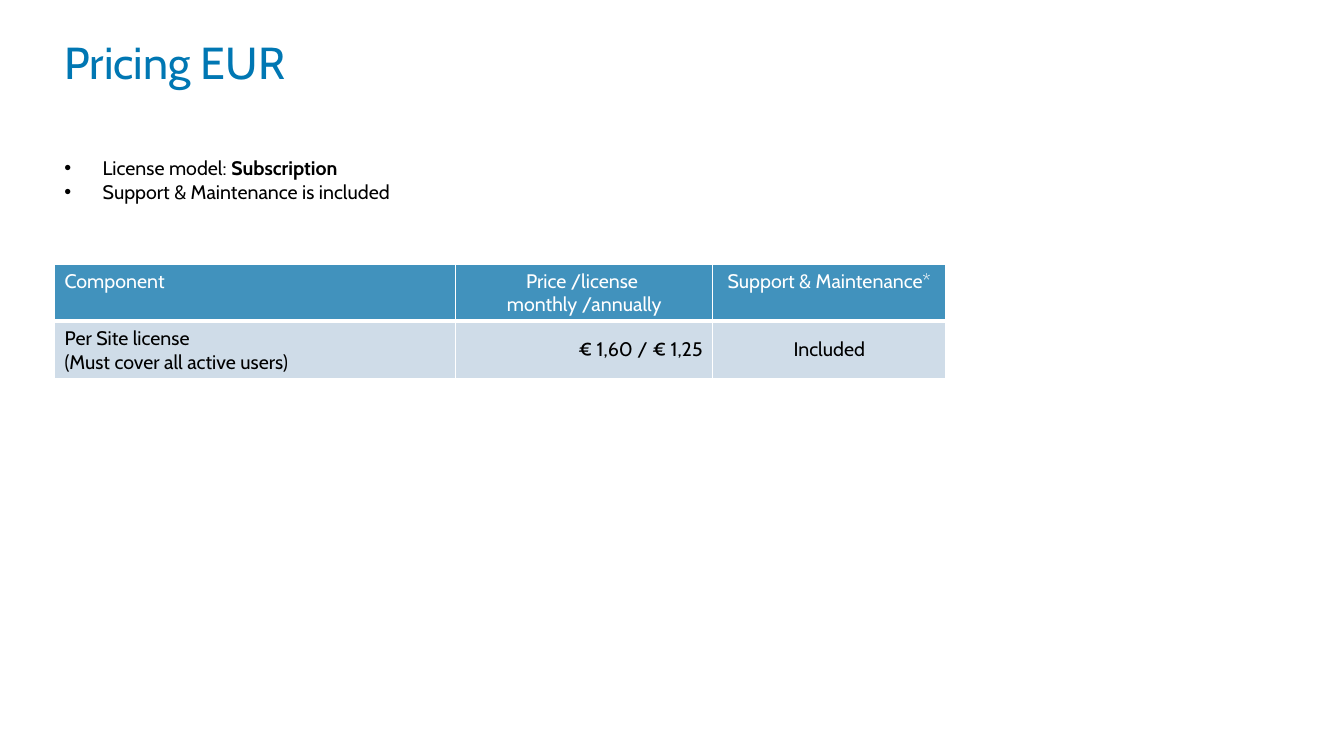
from dataclasses import dataclass

from lxml.etree import SubElement
from pptx import Presentation
from pptx.dml.color import RGBColor
from pptx.enum.text import MSO_ANCHOR as Anchor, PP_ALIGN as Align
from pptx.oxml.ns import qn
from pptx.util import Inches, Pt


@dataclass(frozen=True)
class Theme:
    font: str = "Cabin"
    title_size: int = 32
    body_size: int = 14
    title: str = "0077B3"
    text: str = "000000"
    white: str = "FFFFFF"
    header_fill: str = "4192BD"
    body_fill: str = "CFDCE8"


THEME = Theme()
COLUMN_WIDTHS = (3.98, 2.55, 2.31)
ROW_HEIGHT = 0.565
ALL_SIDES = ("L", "R", "T", "B")
HEADER = (
    (["Component"], Align.LEFT),
    (["Price /license ", "monthly /annually"], Align.CENTER),
    (["Support & Maintenance*"], Align.CENTER),
)
SITE_LICENSE = (
    (["Per Site license \n(Must cover all active users)"], Align.LEFT),
    (["€ 1,60 / € 1,25"], Align.RIGHT),
    (["Included"], Align.CENTER),
)


def add_bullet(paragraph, indent=0.38):
    properties = paragraph._p.get_or_add_pPr()
    properties.set("marL", str(Inches(indent)))
    properties.set("indent", str(-Inches(indent)))
    SubElement(properties, qn("a:buFont"), typeface="Arial")
    SubElement(properties, qn("a:buChar"), char="•")


def write(frame, paragraphs, *, size=THEME.body_size, color=THEME.text,
          align=Align.LEFT, bullet=False, line_spacing=None):
    """Fill a frame; a paragraph is a string or a list of (text, bold) runs."""
    frame.word_wrap = True
    for index, content in enumerate(paragraphs):
        paragraph = frame.add_paragraph() if index else frame.paragraphs[0]
        paragraph.alignment = align
        if line_spacing:
            paragraph.line_spacing = line_spacing
        if bullet:
            add_bullet(paragraph)
        runs = [(content, False)] if isinstance(content, str) else content
        for text, bold in runs:
            for line_number, line in enumerate(text.split("\n")):
                if line_number:
                    paragraph.add_line_break()
                run = paragraph.add_run()
                run.text = line
                run.font.name = THEME.font
                run.font.size = Pt(size)
                run.font.bold = bold
                run.font.color.rgb = RGBColor.from_string(color)


def add_text(slide, box, paragraphs, **text_format):
    shape = slide.shapes.add_textbox(*map(Inches, box))
    write(shape.text_frame, paragraphs, **text_format)


def set_borders(cell, widths):
    properties = cell._tc.get_or_add_tcPr()
    for index, (side, width) in enumerate(widths.items()):
        line = properties.makeelement(qn(f"a:ln{side}"), w=str(Pt(width)))
        fill = SubElement(line, qn("a:solidFill"))
        SubElement(fill, qn("a:srgbClr"), val=THEME.white)
        properties.insert(index, line)


def add_table_row(table, row, contents, *, fill, color, anchor, bottom):
    for column, (paragraphs, align) in enumerate(contents):
        cell = table.cell(row, column)
        cell.vertical_anchor = anchor
        cell.fill.solid()
        cell.fill.fore_color.rgb = RGBColor.from_string(fill)
        set_borders(cell, dict.fromkeys(ALL_SIDES, 1) | bottom)
        write(cell.text_frame, paragraphs, color=color, align=align)


def add_price_table(slide, left, top):
    box = (left, top, sum(COLUMN_WIDTHS), 2 * ROW_HEIGHT)
    table = slide.shapes.add_table(2, len(COLUMN_WIDTHS), *map(Inches, box)).table
    for column, width in zip(table.columns, COLUMN_WIDTHS):
        column.width = Inches(width)
    add_table_row(table, 0, HEADER, fill=THEME.header_fill, color=THEME.white,
                  anchor=Anchor.TOP, bottom={"B": 3})
    add_table_row(table, 1, SITE_LICENSE, fill=THEME.body_fill, color=THEME.text,
                  anchor=Anchor.MIDDLE, bottom={"T": 3})


def add_pricing_slide(presentation):
    slide = presentation.slides.add_slide(presentation.slide_layouts[6])
    left = 0.54
    add_text(slide, (left, 0.36, 12.25, 0.6), ["Pricing EUR"],
             size=THEME.title_size, color=THEME.title, line_spacing=0.9)
    add_text(slide, (left, 1.5, 11.26, 0.57),
             [[("License model: ", False), ("Subscription", True)],
              "Support & Maintenance is included"], bullet=True)
    add_price_table(slide, left, 2.62)


def main():
    presentation = Presentation()
    presentation.slide_width = Inches(13.33)
    presentation.slide_height = Inches(7.5)
    add_pricing_slide(presentation)
    presentation.save("out.pptx")


if __name__ == "__main__":
    main()
